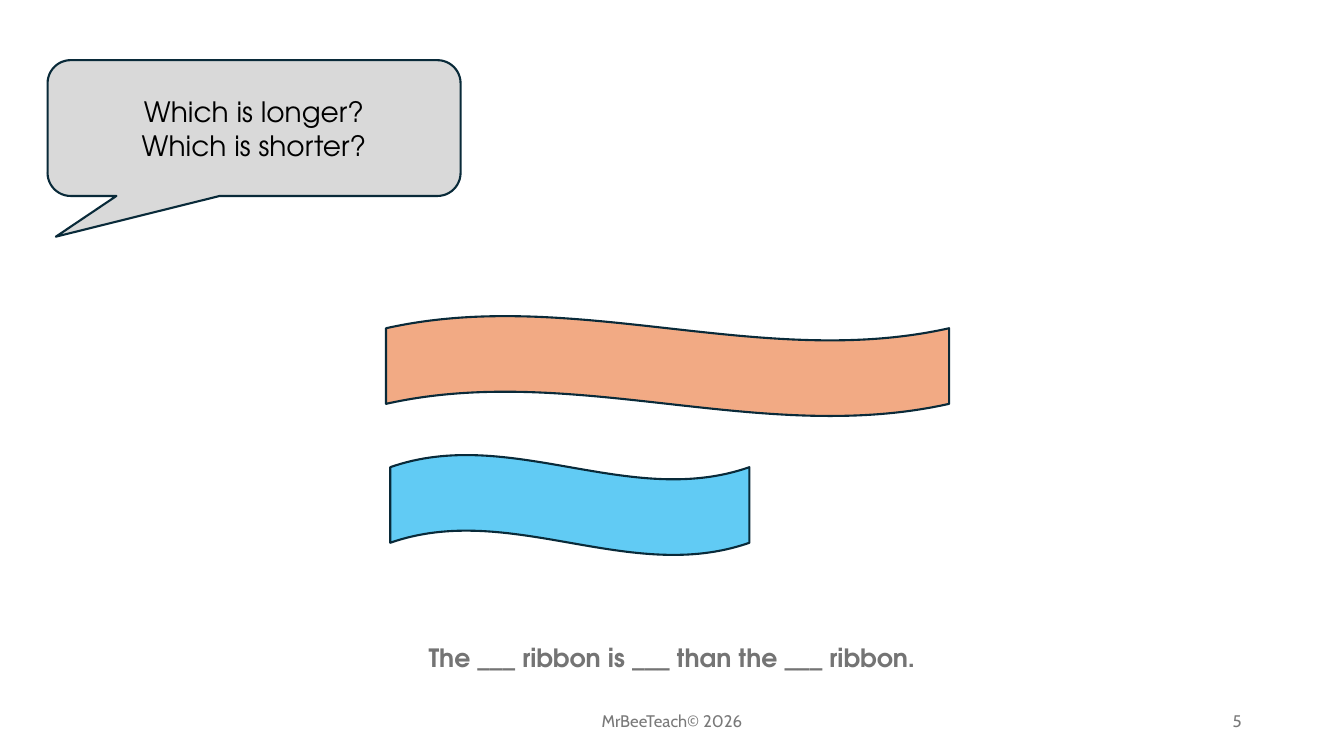
from pptx import Presentation
from pptx.dml.color import RGBColor
from pptx.enum.shapes import MSO_SHAPE
from pptx.enum.text import MSO_ANCHOR, PP_ALIGN
from pptx.util import Pt

COLORS = {
    "outline": "092A39",
    "bubble": "D9D9D9",
    "question": "000000",
    "long_ribbon": "F2AA84",
    "short_ribbon": "61CBF4",
    "sentence": "747474",
    "footer": "797979",
}
HEADING_FONT = "TeX Gyre Adventor"
FOOTER_FONT = "Cabin"


def color(name):
    return RGBColor.from_string(COLORS[name])


def write_lines(shape, lines, size, font_name, color_name,
                align=PP_ALIGN.CENTER, anchor=MSO_ANCHOR.MIDDLE, bold=False):
    frame = shape.text_frame
    frame.word_wrap = True
    frame.vertical_anchor = anchor
    for index, line in enumerate(lines):
        paragraph = frame.add_paragraph() if index else frame.paragraphs[0]
        paragraph.text = line
        paragraph.alignment = align
        font = paragraph.font
        font.name, font.size, font.bold = font_name, Pt(size), bold
        font.color.rgb = color(color_name)


def add_outlined_shape(slide, kind, box, fill_name):
    shape = slide.shapes.add_shape(kind, *map(Pt, box))
    shape.shadow.inherit = False
    shape.fill.solid()
    shape.fill.fore_color.rgb = color(fill_name)
    shape.line.color.rgb = color("outline")
    shape.line.width = Pt(1.5)
    return shape


def add_question_bubble(slide, box, questions):
    bubble = add_outlined_shape(slide, MSO_SHAPE.ROUNDED_RECTANGULAR_CALLOUT, box, "bubble")
    for index, value in enumerate((-0.48, 0.8, 0.17)):
        bubble.adjustments[index] = value
    write_lines(bubble, questions, 20, HEADING_FONT, "question")


def add_ribbons(slide, box):
    """Draw the long ribbon across the box and the short one at its foot."""
    left, top, width, height = box
    ribbon_height = 72
    add_outlined_shape(slide, MSO_SHAPE.WAVE, (left, top, width, ribbon_height), "long_ribbon")
    add_outlined_shape(
        slide, MSO_SHAPE.WAVE,
        (left + 3, top + height - ribbon_height, 256.5, ribbon_height), "short_ribbon")


def add_sentence_frame(slide, box, sentence):
    text_box = slide.shapes.add_textbox(*map(Pt, box))
    write_lines(text_box, [sentence], 18, HEADING_FONT, "sentence",
                anchor=MSO_ANCHOR.TOP, bold=True)


def add_footer(slide, box, credit, number):
    left, top, width, height = box
    number_width = 216
    parts = (
        (credit, left, 324, PP_ALIGN.CENTER),
        (number, left + width - number_width, number_width, PP_ALIGN.RIGHT),
    )
    for text, part_left, part_width, align in parts:
        text_box = slide.shapes.add_textbox(Pt(part_left), Pt(top), Pt(part_width), Pt(height))
        write_lines(text_box, [text], 12, FOOTER_FONT, "footer", align)


def main():
    presentation = Presentation()
    presentation.slide_width, presentation.slide_height = Pt(960), Pt(540)
    slide = presentation.slides.add_slide(presentation.slide_layouts[6])
    add_footer(slide, (318, 500.5, 576, 28.75), "MrBeeTeach© 2026", "5")
    add_sentence_frame(slide, (240, 455, 480, 29),
                       "The ___ ribbon is ___ than the ___ ribbon.")
    add_ribbons(slide, (275.75, 225.5, 402.25, 171.25))
    add_question_bubble(slide, (34, 43, 295, 97),
                        ["Which is longer?", "Which is shorter?"])
    presentation.save("out.pptx")


if __name__ == "__main__":
    main()
